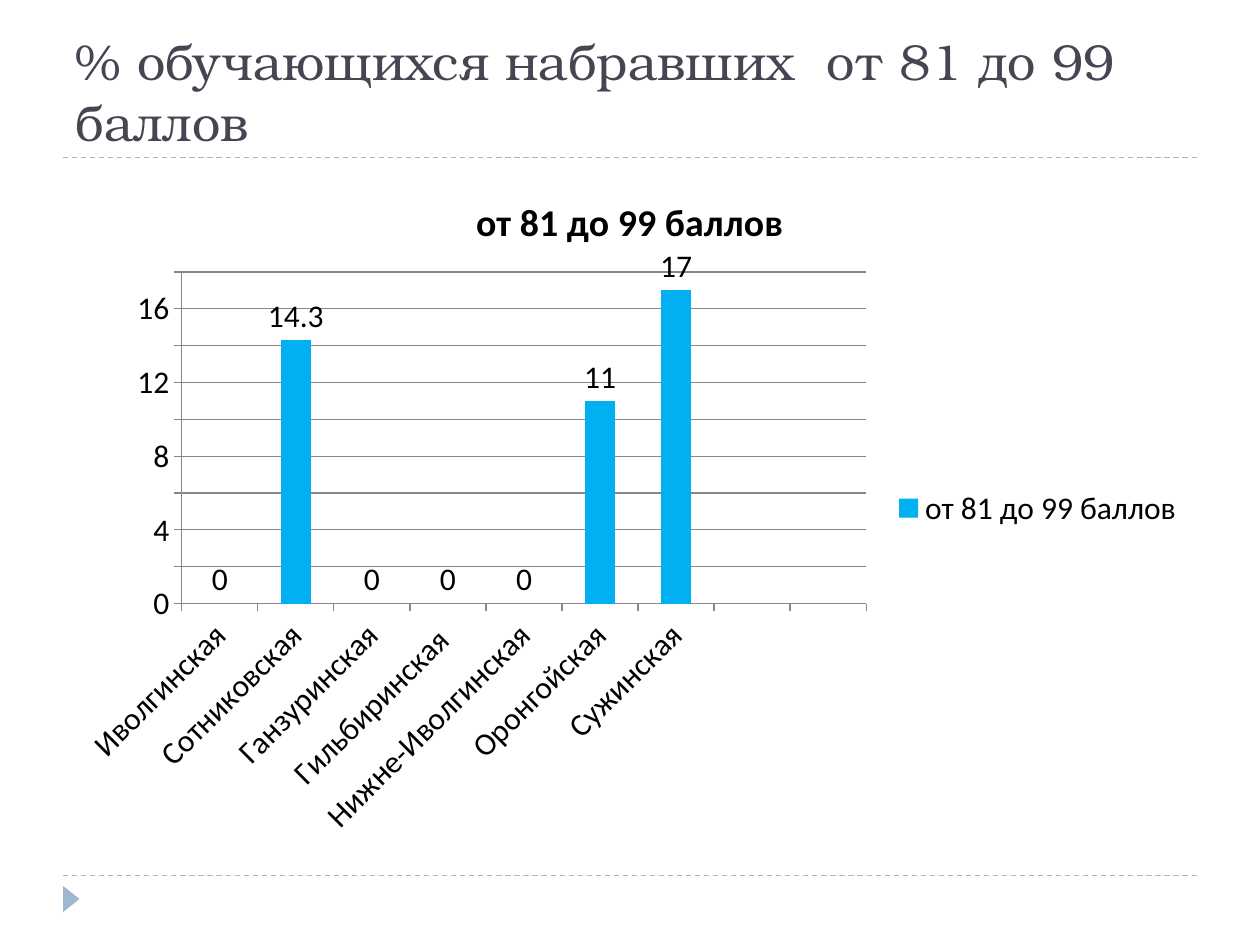
from dataclasses import dataclass

from lxml.etree import SubElement
from pptx import Presentation
from pptx.chart.data import CategoryChartData
from pptx.dml.color import RGBColor
from pptx.enum.chart import XL_CHART_TYPE as ChartType
from pptx.enum.chart import XL_LABEL_POSITION as LabelPos
from pptx.enum.chart import XL_LEGEND_POSITION as LegendPos
from pptx.enum.chart import XL_TICK_MARK as Tick
from pptx.enum.dml import MSO_LINE_DASH_STYLE as Dash
from pptx.enum.shapes import MSO_CONNECTOR as Connector
from pptx.enum.shapes import MSO_SHAPE as Shape
from pptx.enum.text import MSO_ANCHOR as Anchor
from pptx.enum.text import MSO_AUTO_SIZE as AutoSize
from pptx.enum.text import PP_ALIGN as Align
from pptx.oxml.ns import qn
from pptx.util import Pt

ACCENT, INK, BAR, GRID = "9FB8CD", "464653", "00B0F0", "878787"
LEFT, WIDTH = 36, 648
SERIES = "от 81 до 99 баллов"
RESULTS = [
    ("Иволгинская", 0),
    ("Сотниковская", 14.3),
    ("Ганзуринская", 0),
    ("Гильбиринская ", 0),
    ("Нижне-Иволгинская", 0),
    ("Оронгойская", 11),
    ("Сужинская", 17),
    ("", None),
    ("", None),
]


@dataclass
class Rule:
    y: float
    color: str = ACCENT
    width: float = 0.75


def rgb(color: str) -> RGBColor:
    return RGBColor.from_string(color)


def apply(target, **formats) -> None:
    for name, value in formats.items():
        setattr(target, name, value)


def style_font(font, name: str, size: float, color: str, bold: bool = False) -> None:
    apply(font, name=name, size=Pt(size), bold=bold)
    font.color.rgb = rgb(color)


def style_line(line, color: str, width: float = 0.75) -> None:
    line.color.rgb = rgb(color)
    line.width = Pt(width)


def add_rule(s, rule: Rule) -> None:
    y = Pt(rule.y)
    line = s.shapes.add_connector(Connector.STRAIGHT, Pt(LEFT), y, Pt(LEFT + WIDTH), y)
    style_line(line.line, rule.color, rule.width)
    line.line.dash_style = Dash.DASH
    SubElement(line.element.spPr, qn("a:effectLst"))


def add_marker(s) -> None:
    sp = s.shapes.add_shape(Shape.ISOSCELES_TRIANGLE, Pt(33.2), Pt(509), Pt(15), Pt(9.4))
    sp.rotation = 90
    sp.shadow.inherit = False
    sp.fill.solid()
    sp.fill.fore_color.rgb = rgb(ACCENT)
    sp.line.fill.background()


def set_title(s, text: str) -> None:
    sp = s.shapes.title
    apply(sp, left=Pt(LEFT), top=Pt(12), width=Pt(WIDTH), height=Pt(78))
    tf = sp.text_frame
    apply(tf, word_wrap=True, auto_size=AutoSize.NONE, vertical_anchor=Anchor.BOTTOM)
    p = tf.paragraphs[0]
    p.alignment = Align.LEFT
    r = p.add_run()
    r.text = text
    style_font(r.font, "TeX Gyre Bonum", 28.8, INK)


def add_results_chart(s) -> None:
    data = CategoryChartData()
    data.categories = [name for name, _ in RESULTS]
    data.add_series(SERIES, [value for _, value in RESULTS])
    chart = s.shapes.add_chart(
        ChartType.COLUMN_CLUSTERED, Pt(LEFT), Pt(96), Pt(WIDTH), Pt(388.8), data
    ).chart
    style_font(chart.font, "Calibri", 18, "000000")
    apply(chart, has_title=True, has_legend=True)
    apply(chart.legend, position=LegendPos.RIGHT, include_in_layout=False)
    p = chart.chart_title.text_frame.paragraphs[0]
    r = p.add_run()
    r.text = SERIES
    style_font(r.font, "Calibri", 21.6, "000000", bold=True)

    for axis in (chart.category_axis, chart.value_axis):
        apply(axis, major_tick_mark=Tick.OUTSIDE, minor_tick_mark=Tick.NONE)
        style_line(axis.format.line, GRID)
    apply(chart.value_axis, minimum_scale=0, maximum_scale=18, major_unit=2)
    style_line(chart.value_axis.major_gridlines.format.line, GRID)

    plot = chart.plots[0]
    apply(plot, gap_width=150, vary_by_categories=False)
    bars = plot.series[0]
    bars.format.fill.solid()
    bars.format.fill.fore_color.rgb = rgb(BAR)
    apply(bars.data_labels, show_value=True, position=LabelPos.OUTSIDE_END)


def main() -> None:
    prs = Presentation()
    apply(prs, slide_width=Pt(720), slide_height=Pt(540))
    s = prs.slides.add_slide(prs.slide_layouts[5])
    for rule in (Rule(500.4), Rule(90)):
        add_rule(s, rule)
    add_marker(s)
    set_title(s, "% обучающихся набравших  от 81 до 99 баллов")
    add_results_chart(s)
    prs.save("out.pptx")


if __name__ == "__main__":
    main()
